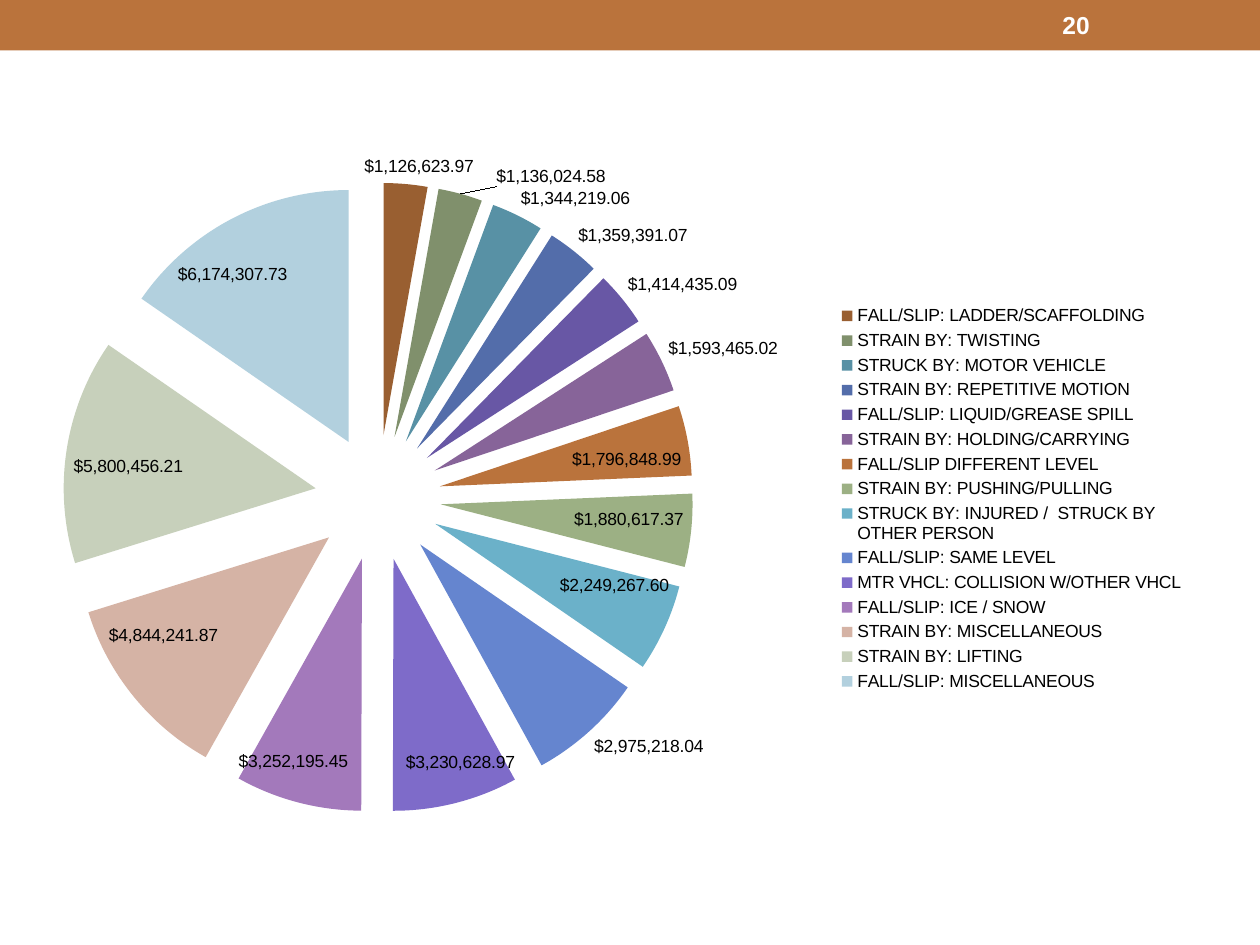
from dataclasses import dataclass

from lxml.etree import SubElement
from pptx import Presentation
from pptx.chart.data import CategoryChartData
from pptx.dml.color import RGBColor
from pptx.enum.chart import XL_CHART_TYPE, XL_LABEL_POSITION, XL_LEGEND_POSITION
from pptx.enum.shapes import MSO_SHAPE
from pptx.enum.text import MSO_ANCHOR
from pptx.oxml import parse_xml
from pptx.oxml.ns import nsdecls, qn
from pptx.util import Pt


@dataclass(frozen=True)
class Theme:
    font: str = "Arial"
    number_size: int = 14
    chart_size: int = 10
    bar: str = "BA733C"
    white: str = "FFFFFF"
    black: str = "000000"
    slices: tuple = (
        "995F31", "80906C", "5891A5", "536DAA", "6857A5",
        "876499", "BA733C", "9CB084", "6BB1C9", "6585CF",
        "7E6BC9", "A379BB", "D5B3A5", "C7D0BB", "B2D0DE",
    )


THEME = Theme()
MONEY = '"$"#,##0.00'
COSTS = (
    ("FALL/SLIP: LADDER/SCAFFOLDING", 1126623.97),
    ("STRAIN BY: TWISTING", 1136024.58),
    ("STRUCK BY: MOTOR VEHICLE", 1344219.06),
    ("STRAIN BY: REPETITIVE MOTION", 1359391.07),
    ("FALL/SLIP: LIQUID/GREASE SPILL", 1414435.09),
    ("STRAIN BY: HOLDING/CARRYING", 1593465.02),
    ("FALL/SLIP DIFFERENT LEVEL", 1796848.99),
    ("STRAIN BY: PUSHING/PULLING", 1880617.37),
    ("STRUCK BY: INJURED /  STRUCK BY OTHER PERSON", 2249267.60),
    ("FALL/SLIP: SAME LEVEL", 2975218.04),
    ("MTR VHCL: COLLISION W/OTHER VHCL", 3230628.97),
    ("FALL/SLIP: ICE / SNOW", 3252195.45),
    ("STRAIN BY: MISCELLANEOUS", 4844241.87),
    ("STRAIN BY: LIFTING", 5800456.21),
    ("FALL/SLIP: MISCELLANEOUS", 6174307.73),
)


def color(value):
    return RGBColor.from_string(value)


def manual_layout(**values):
    layout = parse_xml(f"<c:layout {nsdecls('c')}><c:manualLayout/></c:layout>")
    for tag, value in values.items():
        SubElement(layout[0], qn(f"c:{tag}")).set("val", str(value))
    return layout


def add_header(s, x, y, w, h, number):
    bar = s.shapes.add_shape(MSO_SHAPE.RECTANGLE, Pt(x), Pt(y), Pt(w), Pt(h))
    bar.shadow.inherit = False
    bar.fill.solid()
    bar.fill.fore_color.rgb = color(THEME.bar)
    bar.line.fill.background()

    sp = s.shapes.add_textbox(Pt(x + w - 120), Pt(y + 1.4), Pt(84), Pt(h - 2.8))
    tf = sp.text_frame
    tf.word_wrap = True
    tf.vertical_anchor = MSO_ANCHOR.MIDDLE
    tf.text = number
    font = tf.paragraphs[0].runs[0].font
    font.name = THEME.font
    font.size = Pt(THEME.number_size)
    font.bold = True
    font.color.rgb = color(THEME.white)


def add_cost_pie(s, x, y, w, h):
    data = CategoryChartData(number_format=MONEY)
    data.categories = [cause for cause, _ in COSTS]
    data.add_series("Series 1", [cost for _, cost in COSTS])
    chart = s.shapes.add_chart(
        XL_CHART_TYPE.PIE, Pt(x), Pt(y), Pt(w), Pt(h), data
    ).chart
    chart.has_title = False
    chart.font.name = THEME.font
    chart.font.size = Pt(THEME.chart_size)
    chart.font.color.rgb = color(THEME.black)
    chart.has_legend = True
    chart.legend.position = XL_LEGEND_POSITION.RIGHT
    chart.legend.include_in_layout = False

    plot = chart.plots[0]
    plot.vary_by_categories = True
    area = chart.element.find(".//" + qn("c:plotArea"))
    for old in area.findall(qn("c:layout")):
        area.remove(old)
    area.insert(0, manual_layout(
        layoutTarget="inner", xMode="edge", yMode="edge",
        x=0, y=42 / h, w=360 / w, h=425 / h,
    ))

    series = plot.series[0]
    series.format.fill.solid()
    series.format.fill.fore_color.rgb = color(THEME.bar)
    explosion = parse_xml(f'<c:explosion {nsdecls("c")} val="25"/>')
    series._element.find(qn("c:spPr")).addnext(explosion)
    for i, value in enumerate(THEME.slices):
        fill = series.points[i].format.fill
        fill.solid()
        fill.fore_color.rgb = color(value)

    labels = series.data_labels
    labels.show_value = True
    labels.number_format = MONEY
    labels.number_format_is_linked = False
    labels.position = XL_LABEL_POSITION.BEST_FIT
    leader = labels._element.find(qn("c:showLeaderLines"))
    if leader is None:
        leader = SubElement(labels._element, qn("c:showLeaderLines"))
    leader.set("val", "1")

    series.points[1].data_label.position = XL_LABEL_POSITION.BEST_FIT
    twisting = labels._element.find(qn("c:dLbl"))
    twisting.find(qn("c:idx")).addnext(manual_layout(x=0.03, y=0))


def main():
    prs = Presentation()
    prs.slide_width, prs.slide_height = Pt(720), Pt(540)
    s = prs.slides.add_slide(prs.slide_layouts[6])
    add_header(s, 0, 0, 720, 28.8, "20")
    add_cost_pie(s, 36, 30, 648, 510)
    prs.save("out.pptx")


if __name__ == "__main__":
    main()
